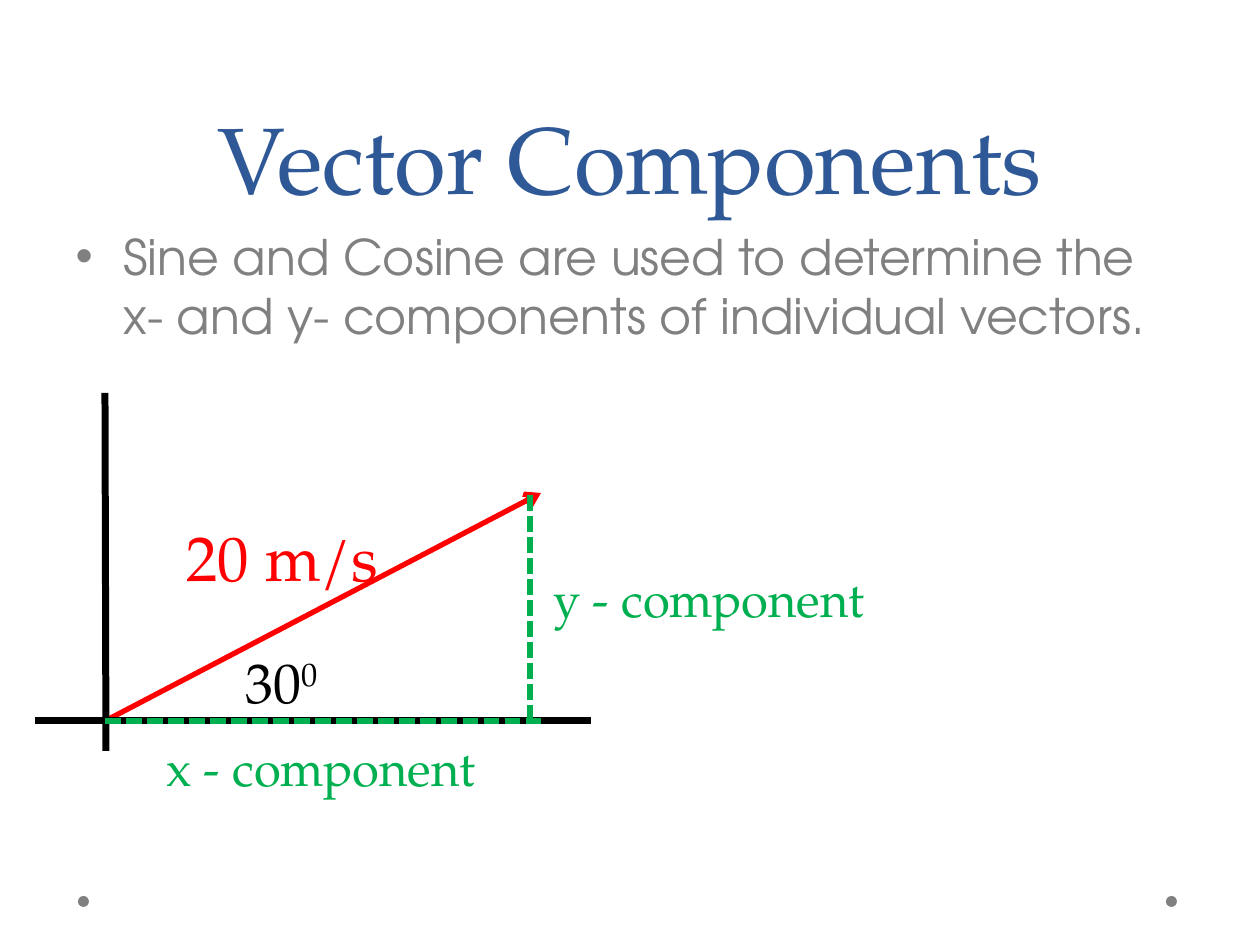
import pptx
import pptx.dml.color
import pptx.enum.dml
import pptx.enum.shapes
import pptx.enum.text
import pptx.oxml.ns
import pptx.util
from lxml import etree

THEME = {
    "serif": "TeX Gyre Pagella", "sans": "TeX Gyre Adventor",
    "blue": "2F5897", "gray": "808080", "black": "000000",
    "red": "FF0000", "green": "00B050",
    "title": 54, "body": 28, "component": 28, "angle": 32, "vector": 36,
    "axis width": 4, "vector width": 3,
}

SLIDE_SIZE = (1260, 945)
TITLE = ("Vector Components", (63, 0, 1134, 220))
BODY = ("Sine and Cosine are used to determine the x- and y- components "
        "of individual vectors.", (63, 220, 1134, 152))
BULLET_INDENT = 48
DOT_SIZE, DOT_TOP, DOT_LEFTS = 11, 896, (1166, 78)

ORIGIN, TIP = (105, 721), (541, 493)
HEIGHT_X = 530
AXES = [((35, ORIGIN[1]), (591, ORIGIN[1])), ((106, 751), (105, 393))]
COMPONENTS = [
    (ORIGIN, (TIP[0], ORIGIN[1]), "x - component", (154, 731, 367, 72)),
    ((HEIGHT_X, ORIGIN[1]), (HEIGHT_X, TIP[1]), "y - component", (541, 562, 367, 72)),
]
ANGLE = ("30", "0", (233, 641, 118, 81))
SPEED = ("20 m/s", (174, 512, 218, 89))


def px(length):
    return pptx.util.Emu(round(length * 914400 / 126))


def color(name):
    return pptx.dml.color.RGBColor.from_string(THEME[name])


def place(shape, box):
    shape.left, shape.top, shape.width, shape.height = map(px, box)


def write(shape, text, *, size, ink, font="serif", superscript=None):
    """Put one formatted paragraph in the shape and return the paragraph."""
    frame = shape.text_frame
    frame.word_wrap = True
    paragraph = frame.paragraphs[0]
    for part in filter(None, (text, superscript)):
        run = paragraph.add_run()
        run.text = part
        run.font.name = THEME[font]
        run.font.size = pptx.util.Pt(THEME[size])
        run.font.color.rgb = color(ink)
    if superscript:
        run.font._element.set("baseline", "30000")
    return paragraph


def add_label(shapes, text, box, **style):
    label = shapes.add_textbox(*map(px, box))
    write(label, text, **style)
    label.text_frame.auto_size = pptx.enum.text.MSO_AUTO_SIZE.SHAPE_TO_FIT_TEXT


def add_line(shapes, start, end, *, ink, width, dashed=False, arrow=False):
    line = shapes.add_connector(
        pptx.enum.shapes.MSO_CONNECTOR.STRAIGHT, *map(px, start + end))
    line.line.color.rgb = color(ink)
    line.line.width = pptx.util.Pt(THEME[width])
    if dashed:
        line.line.dash_style = pptx.enum.dml.MSO_LINE.SQUARE_DOT
    properties = line._element.spPr
    if arrow:
        outline = properties.find(pptx.oxml.ns.qn("a:ln"))
        etree.SubElement(outline, pptx.oxml.ns.qn("a:tailEnd"), type="arrow")
    etree.SubElement(properties, pptx.oxml.ns.qn("a:effectLst"))


def add_dots(shapes):
    for left in DOT_LEFTS:
        dot = shapes.add_shape(pptx.enum.shapes.MSO_SHAPE.OVAL,
                               *map(px, (left, DOT_TOP, DOT_SIZE, DOT_SIZE)))
        dot.shadow.inherit = False
        dot.fill.solid()
        dot.fill.fore_color.rgb = color("gray")
        dot.line.fill.background()


def fill_placeholders(slide):
    title, body = slide.shapes.title, slide.placeholders[1]
    place(title, TITLE[1])
    paragraph = write(title, TITLE[0], size="title", ink="blue")
    paragraph.alignment = pptx.enum.text.PP_ALIGN.CENTER
    paragraph.line_spacing = pptx.util.Pt(58)
    title.text_frame.vertical_anchor = pptx.enum.text.MSO_ANCHOR.BOTTOM

    place(body, BODY[1])
    paragraph = write(body, BODY[0], size="body", ink="gray", font="sans")
    paragraph.space_before = pptx.util.Pt(THEME["body"] * 0.2)
    properties = paragraph._p.get_or_add_pPr()
    properties.set("marL", str(px(BULLET_INDENT)))
    properties.set("indent", str(-px(BULLET_INDENT)))
    etree.SubElement(properties, pptx.oxml.ns.qn("a:buChar"), char="•")

    for placeholder in (title, body):
        placeholder.text_frame.auto_size = pptx.enum.text.MSO_AUTO_SIZE.NONE


def draw_diagram(shapes):
    add_line(shapes, ORIGIN, TIP, ink="red", width="vector width", arrow=True)
    axes = shapes.add_group_shape().shapes
    for start, end in AXES:
        add_line(axes, start, end, ink="black", width="axis width")
    degrees, mark, box = ANGLE
    add_label(axes, degrees, box, size="angle", ink="black", superscript=mark)
    add_label(shapes, *SPEED, size="vector", ink="red")
    for start, end, text, box in COMPONENTS:
        add_line(shapes, start, end, ink="green", width="vector width", dashed=True)
        add_label(shapes, text, box, size="component", ink="green")


def main():
    presentation = pptx.Presentation()
    presentation.slide_width, presentation.slide_height = map(px, SLIDE_SIZE)
    slide = presentation.slides.add_slide(presentation.slide_layouts[1])
    add_dots(slide.shapes)
    fill_placeholders(slide)
    draw_diagram(slide.shapes)
    presentation.save("out.pptx")


if __name__ == "__main__":
    main()
